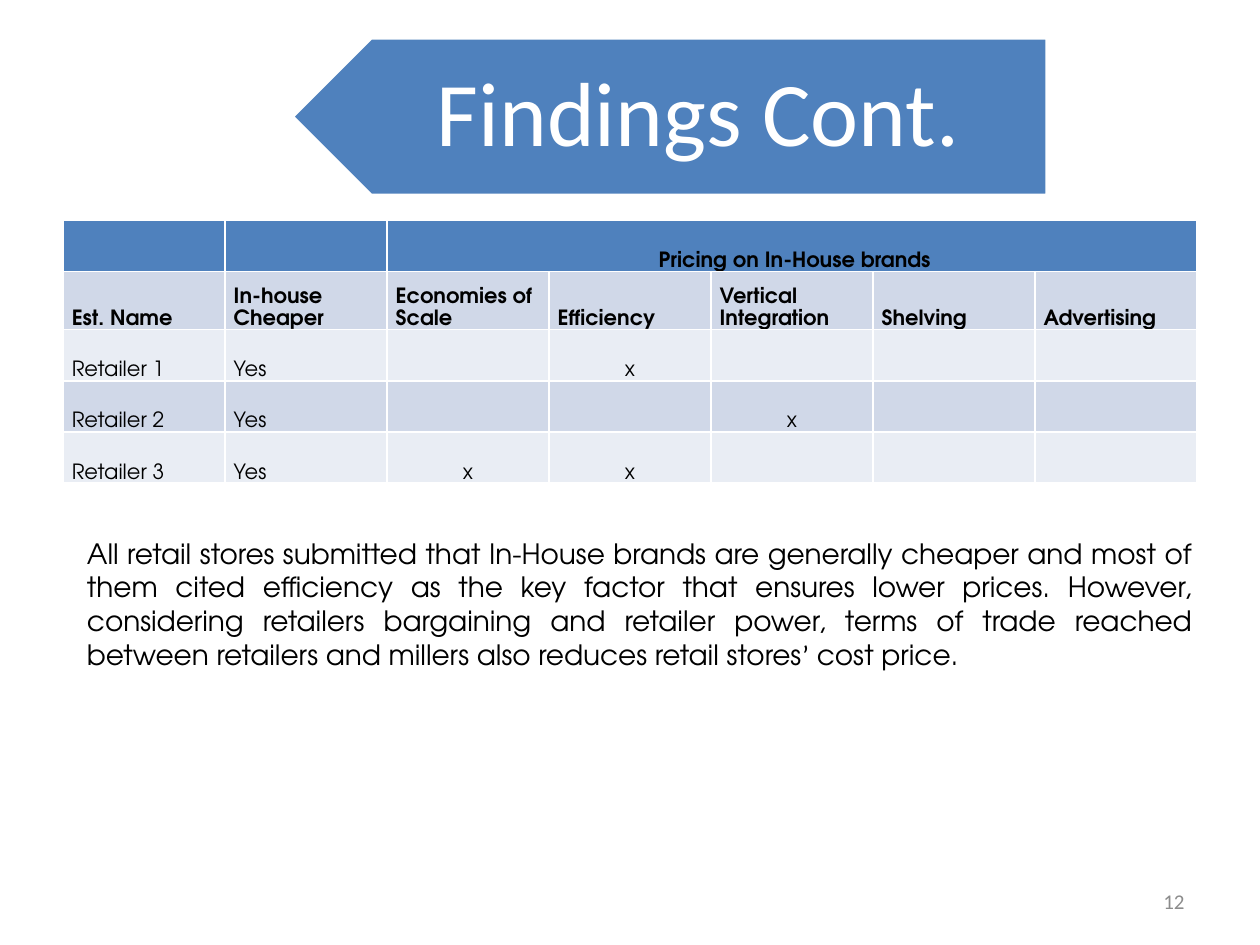
import lxml.etree
import pptx
import pptx.dml.color
import pptx.enum.shapes
import pptx.enum.text
import pptx.oxml.ns
import pptx.util
from dataclasses import dataclass

PX = 9144  # EMU per px, 100 px to the inch
ALIGN = pptx.enum.text.PP_ALIGN
ANCHOR = pptx.enum.text.MSO_ANCHOR


@dataclass(frozen=True)
class Theme:
    blue: str = "4F81BD"
    dark_band: str = "D0D8E8"
    light_band: str = "E9EDF4"
    white: str = "FFFFFF"
    black: str = "000000"
    gray: str = "8C8C8C"
    plain_font: str = "Calibri"
    text_font: str = "TeX Gyre Adventor"
    title_size: int = 52
    body_size: int = 16
    small_size: int = 12


theme = Theme()


def place(shape, left, top, width, height):
    shape.left, shape.top = left * PX, top * PX
    shape.width, shape.height = width * PX, height * PX


def style(para, name, size, color, align, bold=False):
    para.alignment = align
    for span in para.runs:
        span.font.name = name
        span.font.size = pptx.util.Pt(size)
        span.font.bold = bold
        span.font.color.rgb = pptx.dml.color.RGBColor.from_string(color)


deck = pptx.Presentation()
deck.slide_width, deck.slide_height = 1000 * PX, 750 * PX
page = deck.slides.add_slide(deck.slide_layouts[1])
title, body = page.shapes.title, page.placeholders[1]

# Title arrow, pointing left and lying behind the title
arrow = page.shapes.add_shape(
    pptx.enum.shapes.MSO_SHAPE.PENTAGON, 232 * PX, 30 * PX, 599 * PX, 125 * PX)
arrow.rotation = 180
arrow.shadow.inherit = False
arrow.fill.solid()
arrow.fill.fore_color.rgb = pptx.dml.color.RGBColor.from_string(theme.blue)
arrow.line.color.rgb = pptx.dml.color.RGBColor.from_string(theme.white)
arrow.line.width = pptx.util.Pt(2)
title.element.addprevious(arrow.element)

# Title
place(title, 263, 30, 567, 125)
frame = title.text_frame
frame.text = "Findings Cont."
frame.auto_size = pptx.enum.text.MSO_AUTO_SIZE.NONE
frame.vertical_anchor = ANCHOR.MIDDLE
frame.margin_left, frame.margin_right = 55 * PX, 40 * PX
frame.margin_top = frame.margin_bottom = 22 * PX
frame.paragraphs[0].line_spacing = 0.9
style(frame.paragraphs[0], theme.plain_font, theme.title_size, theme.white, ALIGN.CENTER)

# Pricing table
rows = [
    ["", "", " Pricing on In-House brands", "", "", "", ""],
    ["Est. Name", "In-house Cheaper", "Economies of Scale", "Efficiency",
     "Vertical Integration", "Shelving", "Advertising"],
    ["Retailer 1", "Yes", "", "x", "", "", ""],
    ["Retailer 2", "Yes", "", "", "x", "", ""],
    ["Retailer 3", "Yes", "x", "x", "", "", ""],
]
fills = [theme.blue] + [theme.dark_band, theme.light_band] * 2
table = page.shapes.add_table(
    len(rows), len(rows[0]), 50 * PX, 175 * PX, 900 * PX, 203 * PX).table
table.cell(0, 2).merge(table.cell(0, 6))
for row_index, (row, fill) in enumerate(zip(rows, fills)):
    for column_index, text in enumerate(row):
        cell = table.cell(row_index, column_index)
        cell.fill.solid()
        cell.fill.fore_color.rgb = pptx.dml.color.RGBColor.from_string(fill)
        cell.vertical_anchor = ANCHOR.BOTTOM
        cell.margin_left = cell.margin_right = 7 * PX
        cell.margin_top = cell.margin_bottom = 0
        if not text:
            continue
        cell.text_frame.text = text
        para = cell.text_frame.paragraphs[0]
        para.line_spacing = 1.15
        centered = row_index == 0 or text == "x"
        style(para, theme.text_font, theme.small_size, theme.black,
              ALIGN.CENTER if centered else ALIGN.LEFT, bold=row_index < 2)

# Conclusion
place(body, 59, 420, 898, 118)
frame = body.text_frame
frame.auto_size = pptx.enum.text.MSO_AUTO_SIZE.SHAPE_TO_FIT_TEXT
frame.vertical_anchor = ANCHOR.MIDDLE
para = frame.paragraphs[0]
for text in (
    "All retail stores submitted that In-House brands are generally cheaper and most of "
    "them cited efficiency as the key factor that ensures lower prices. However, "
    "considering retailers bargaining and retailer power, terms of trade reached "
    "between retailers and millers also reduces retail stores",
    "’",
    " cost price. ",
):
    para.add_run().text = text
properties = para._p.get_or_add_pPr()
properties.set("marL", "0")
properties.set("indent", "0")
lxml.etree.SubElement(properties, pptx.oxml.ns.qn("a:buNone"))
para.space_before = pptx.util.Pt(0)
style(para, theme.text_font, theme.body_size, theme.black, ALIGN.JUSTIFY)
para.runs[1].font.name = theme.plain_font

# Page number
box = page.shapes.add_textbox(717 * PX, 695 * PX, 233 * PX, 40 * PX)
frame = box.text_frame
frame.word_wrap = True
frame.vertical_anchor = ANCHOR.MIDDLE
frame.text = "12"
style(frame.paragraphs[0], theme.plain_font, theme.small_size, theme.gray, ALIGN.RIGHT)

deck.save("out.pptx")
